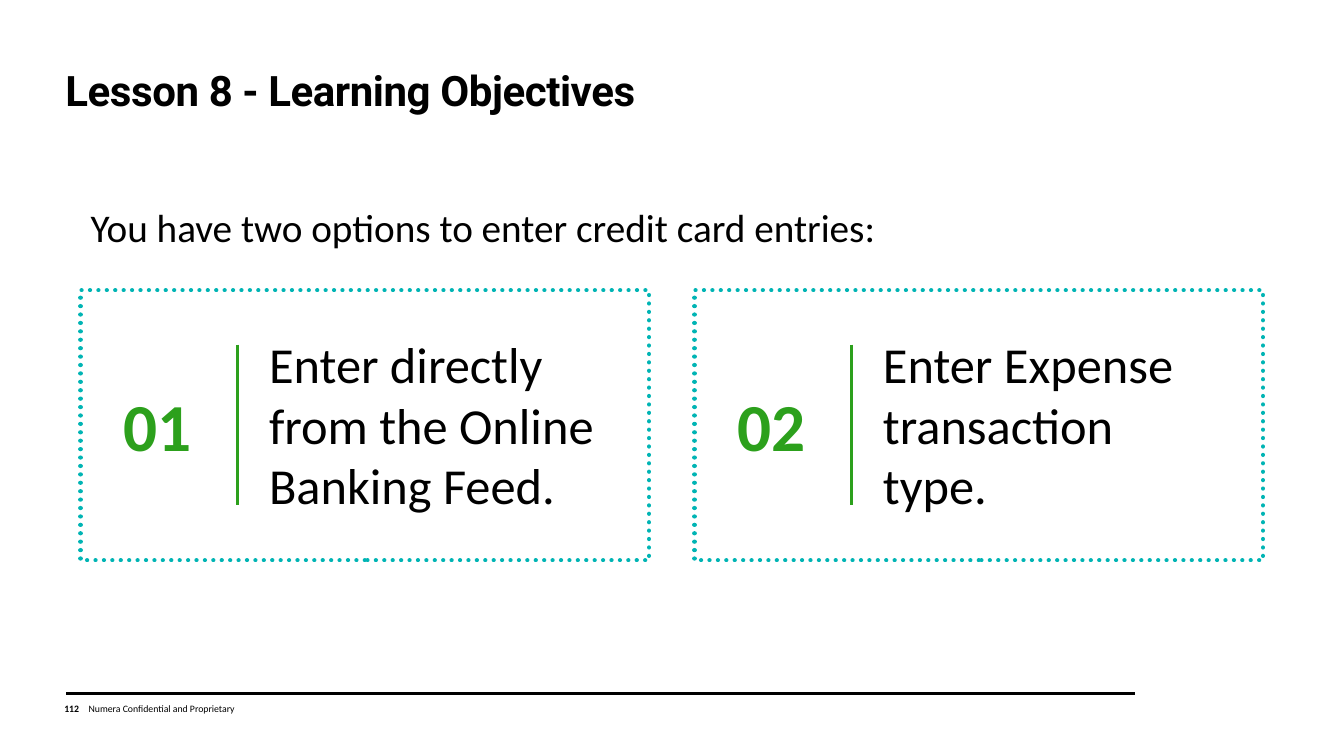
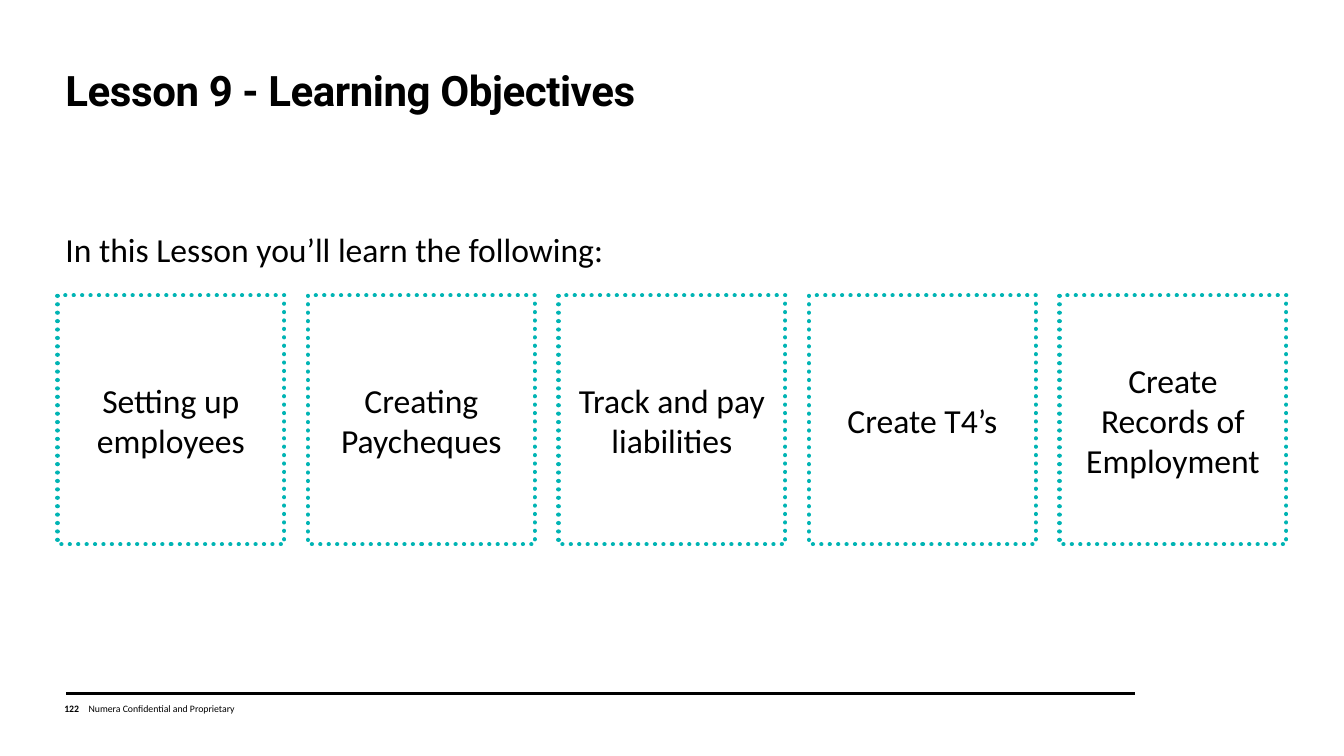
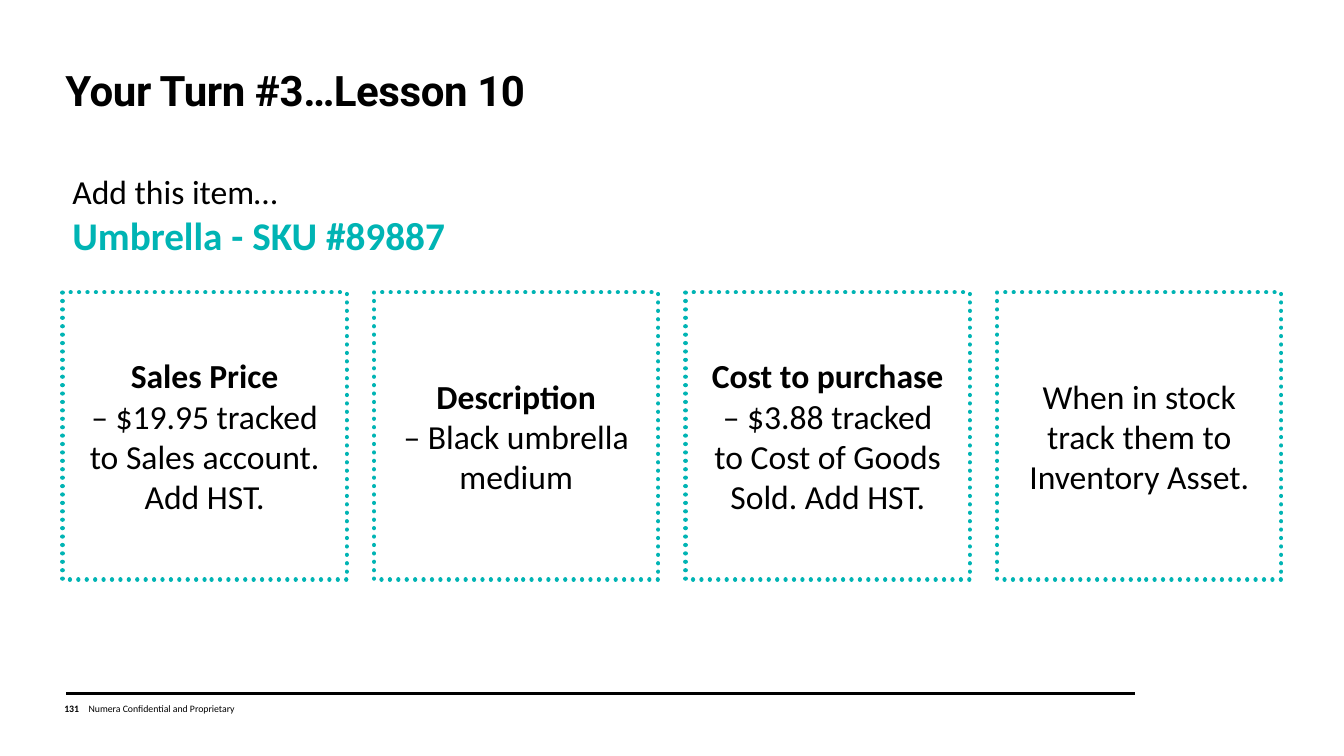
from pptx import Presentation
from pptx import util as u
from pptx.dml.color import RGBColor
from pptx.enum import dml, shapes, text
from pptx.oxml.ns import qn
from lxml import etree

BLACK, WHITE, TEAL, GREEN = "000000", "FFFFFF", "00B4B4", "2CA01C"
BODY, HEADING = "Calibri", "Roboto"
LEFT, CENTER = text.PP_ALIGN.LEFT, text.PP_ALIGN.CENTER
TOP, MIDDLE, BOTTOM = text.MSO_ANCHOR.TOP, text.MSO_ANCHOR.MIDDLE, text.MSO_ANCHOR.BOTTOM

deck = Presentation()
deck.slide_width, deck.slide_height = u.Inches(13.33), u.Inches(7.5)
column, row = deck.slide_width / 100, deck.slide_height / 100


def paint(fill, color):
    fill.solid()
    fill.fore_color.rgb = RGBColor.from_string(color)


def add_box(page, area, lines, font=BODY, align=LEFT, anchor=TOP, margin=0.1, card=False):
    left, top, width, height = area
    place = [int(left * column), int(top * row), int(width * column), int(height * row)]
    if card:
        box = page.shapes.add_shape(shapes.MSO_SHAPE.RECTANGLE, *place)
        box.shadow.inherit = False
        paint(box.fill, WHITE)
        paint(box.line.fill, TEAL)
        box.line.width = u.Pt(3)
        box.line.dash_style = dml.MSO_LINE.ROUND_DOT
        box.line._get_or_add_ln().set("cap", "rnd")
    else:
        box = page.shapes.add_textbox(*place)
    frame = box.text_frame
    frame.word_wrap = True
    frame.vertical_anchor = anchor
    frame.margin_left = frame.margin_right = u.Inches(margin)
    for index, (words, size, bold, color) in enumerate(lines):
        para = frame.add_paragraph() if index else frame.paragraphs[0]
        para.alignment = align
        para.add_run().text = words
        para.font.name, para.font.size, para.font.bold = font, u.Pt(size), bold
        paint(para.font.fill, color)
    return box


lessons = [
    {
        "title": "Lesson 8 - Learning Objectives",
        "number": "112",
        "intro_area": (6, 26.27, 85.65, 7.6),
        "intro": [("You have two options to enter credit card entries:", 28, False, BLACK)],
        "grid": (6, 38.4, 42.3, 35.73, 3.38),
        "margin": 0.1,
        "numbered": True,
        "cards": [["Enter directly from the Online Banking Feed."], ["Enter Expense transaction type."]],
    },
    {
        "title": "Lesson 9 - Learning Objectives",
        "number": "122",
        "intro_area": (4.13, 29.6, 85.65, 6.67),
        "intro": [("In this Lesson you’ll learn the following:", 24, False, BLACK)],
        "grid": (4.27, 39.07, 16.88, 32.93, 1.76),
        "margin": 0.19,
        "numbered": False,
        "cards": [
            ["Setting up employees"],
            ["Creating Paycheques"],
            ["Track and pay liabilities"],
            ["Create T4’s"],
            ["Create Records of Employment"],
        ],
    },
    {
        "title": "Your Turn #3…Lesson 10",
        "number": "131",
        "intro_area": (4.65, 22, 90.6, 13.07),
        "intro": [("Add this item…", 24, False, BLACK), ("Umbrella - SKU #89887", 28, True, TEAL)],
        "grid": (4.65, 38.67, 21.15, 38, 2.03),
        "margin": 0.21,
        "numbered": False,
        "cards": [
            ["Sales Price", "– $19.95 tracked to Sales account. Add HST."],
            ["Description", "– Black umbrella medium"],
            ["Cost to purchase", "– $3.88 tracked to Cost of Goods Sold. Add HST."],
            ["When in stock track them to Inventory Asset."],
        ],
    },
]

for lesson in lessons:
    page = deck.slides.add_slide(deck.slide_layouts[6])
    rules = [(4.95, 91.73, 84.45, 91.73, BLACK, 1.5)]
    add_box(page, (4.05, 92.4, 2.93, 2.67), [(lesson["number"], 7, True, BLACK)], anchor=MIDDLE)
    add_box(page, (6.6, 92.4, 20, 2.67), [("Numera Confidential and Proprietary", 7, False, BLACK)],
            anchor=MIDDLE, margin=0)

    title = add_box(page, (4.13, 8, 91.13, 8), [(lesson["title"], 30, True, BLACK)],
                    font=HEADING, anchor=BOTTOM)
    heading = title.text_frame.paragraphs[0]
    heading.line_spacing = 0.95
    heading.runs[0]._r.get_or_add_rPr().set("spc", "-30")
    add_box(page, lesson["intro_area"], lesson["intro"])

    left, top, width, height, gap = lesson["grid"]
    for index, words in enumerate(lesson["cards"]):
        start = left + index * (width + gap)
        area = (start, top, width, height)
        if lesson["numbered"]:
            add_box(page, area, [], card=True)
            add_box(page, (start + 13.28, 43.47, 26.55, 25.6), [(words[0], 36, False, BLACK)])
            add_box(page, (start + 2.48, 50.13, 8.48, 12.13), [(f"{index + 1:02}", 48, True, GREEN)])
            rules.append((start + 11.7, 45.6, start + 11.7, 66.8, GREEN, 2))
        else:
            lines = [(line, 24, line != words[-1], BLACK) for line in words]
            add_box(page, area, lines, align=CENTER, anchor=MIDDLE, margin=lesson["margin"], card=True)

    for x1, y1, x2, y2, color, weight in rules:
        rule = page.shapes.add_connector(shapes.MSO_CONNECTOR.STRAIGHT, int(x1 * column), int(y1 * row),
                                         int(x2 * column), int(y2 * row))
        paint(rule.line.fill, color)
        rule.line.width = u.Pt(weight)
        etree.SubElement(rule._element.spPr, qn("a:effectLst"))

deck.save("out.pptx")
